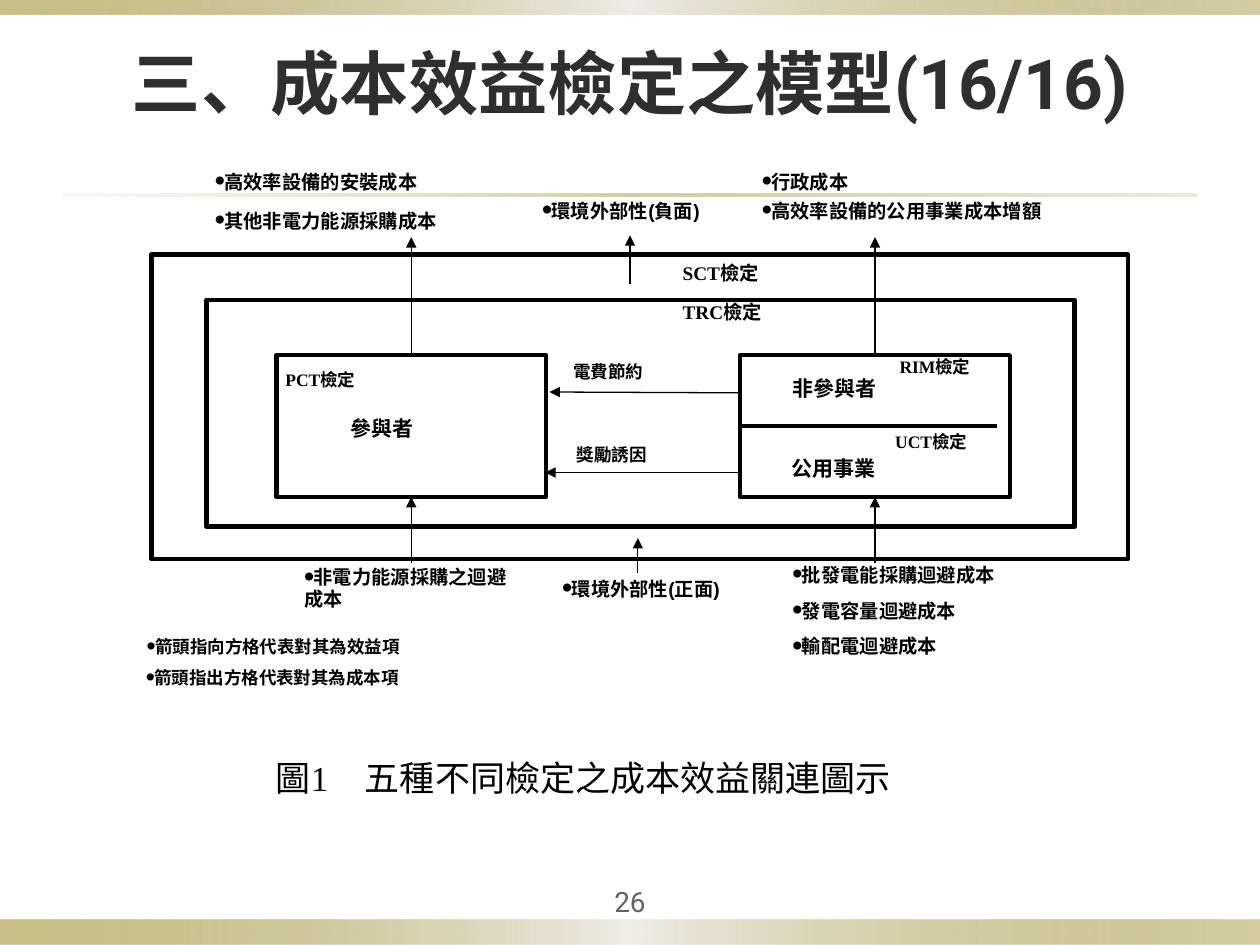
from dataclasses import dataclass
from typing import NamedTuple

from lxml import etree
from pptx import Presentation
from pptx.dml.color import RGBColor
from pptx.enum.shapes import MSO_CONNECTOR, MSO_SHAPE
from pptx.enum.text import MSO_ANCHOR, PP_ALIGN
from pptx.oxml.ns import qn
from pptx.util import Pt

STRAIGHT = MSO_CONNECTOR.STRAIGHT
RECTANGLE = MSO_SHAPE.RECTANGLE
TOP, MIDDLE = MSO_ANCHOR.TOP, MSO_ANCHOR.MIDDLE
LEFT, CENTER, JUSTIFY = PP_ALIGN.LEFT, PP_ALIGN.CENTER, PP_ALIGN.JUSTIFY
SIDE_TOP, SIDE_LEFT, SIDE_BOTTOM = 0, 1, 2


@dataclass(frozen=True)
class Theme:
    ink: str = "000000"
    title_ink: str = "2F2F2F"
    number_ink: str = "626262"
    gold: str = "918415"
    pale: str = "EEECE7"
    sand: str = "DBD8CA"
    sans: str = "Arial"
    serif: str = "Times New Roman"
    heading: str = "Roboto"
    title_size: float = 39.6
    caption_size: float = 20
    number_size: float = 16
    role_size: float = 12
    item_size: float = 11
    note_size: float = 10
    thick: float = 2.5
    thin: float = 0.75


THEME = Theme()


class Area(NamedTuple):
    left: float
    top: float
    width: float
    height: float


class Span(NamedTuple):
    text: str
    size: float
    face: str = THEME.sans
    bold: bool = True
    color: str = THEME.ink
    raised: bool = False


class Label(NamedTuple):
    text: str
    area: Area
    size: float
    face: str = THEME.sans


class Arrow(NamedTuple):
    start: tuple[float, float]
    end: tuple[float, float]


class Stop(NamedTuple):
    position: int
    color: str
    opacity: int


def apply_format(target, values: dict) -> None:
    for name, value in values.items():
        setattr(target, name, value)


def points(area: Area) -> list:
    return [Pt(value) for value in area]


def draw_text(page, area: Area, spans: list[Span], align=LEFT, anchor=TOP,
              spacing=None, tab=None):
    box = page.shapes.add_textbox(*points(area))
    apply_format(box.text_frame, {"word_wrap": True, "vertical_anchor": anchor})
    para = box.text_frame.paragraphs[0]
    apply_format(para, {"alignment": align, "line_spacing": spacing})
    if tab:
        tabs = etree.SubElement(para._p.get_or_add_pPr(), qn("a:tabLst"))
        etree.SubElement(tabs, qn("a:tab"), pos=str(Pt(tab)), algn="l")
    for span in spans:
        run = para.add_run()
        run.text = span.text
        apply_format(run.font, {"size": Pt(span.size), "name": span.face, "bold": span.bold})
        run.font.color.rgb = RGBColor.from_string(span.color)
        if span.raised:
            run._r.get_or_add_rPr().set("baseline", "30000")
    return box


def draw_label(page, label: Label) -> None:
    draw_text(page, label.area, [Span(label.text, label.size, label.face)])


def draw_item(page, label: Label) -> None:
    spans = [Span("●", label.size - 2, raised=True), Span(label.text, label.size)]
    draw_text(page, label.area, spans, spacing=0.96)


def draw_band(page, area: Area, stops: list[Stop]) -> None:
    band = page.shapes.add_shape(RECTANGLE, *points(area))
    band.shadow.inherit = False
    band.line.fill.background()
    band.fill.gradient()
    band.fill.gradient_angle = 0
    stop_list = band._element.spPr.find(qn("a:gradFill")).find(qn("a:gsLst"))
    for old in list(stop_list):
        stop_list.remove(old)
    for stop in stops:
        entry = etree.SubElement(stop_list, qn("a:gs"), pos=str(stop.position * 1000))
        color = etree.SubElement(entry, qn("a:srgbClr"), val=stop.color)
        etree.SubElement(color, qn("a:alpha"), val=str(stop.opacity * 1000))


def draw_frame(page, area: Area):
    frame = page.shapes.add_shape(RECTANGLE, *points(area))
    frame.shadow.inherit = False
    frame.fill.background()
    frame.line.color.rgb = RGBColor.from_string(THEME.ink)
    frame.line.width = Pt(THEME.thick)
    return frame


def draw_line(page, arrow: Arrow, width=THEME.thin, head=True):
    line = page.shapes.add_connector(STRAIGHT, *(Pt(v) for v in arrow.start + arrow.end))
    line.line.color.rgb = RGBColor.from_string(THEME.ink)
    line.line.width = Pt(width)
    properties = line._element.spPr
    if head:
        etree.SubElement(properties.find(qn("a:ln")), qn("a:tailEnd"), type="triangle")
    etree.SubElement(properties, qn("a:effectLst"))
    return line


TEST_LABELS = [
    Label("SCT檢定", Area(383, 145.5, 91, 32), THEME.item_size, THEME.serif),
    Label("TRC檢定", Area(383, 168, 91, 32), THEME.item_size, THEME.serif),
    Label("PCT檢定", Area(156, 207.5, 85, 32), THEME.note_size, THEME.serif),
    Label("RIM檢定", Area(507, 200, 94, 32), THEME.note_size, THEME.serif),
    Label("UCT檢定", Area(504.5, 242.5, 94, 32), THEME.note_size, THEME.serif),
]
ROLE_LABELS = [
    Label("參與者", Area(193, 234, 78, 32), THEME.role_size),
    Label("非參與者", Area(446, 211, 96, 32), THEME.role_size),
    Label("公用事業", Area(445, 256.5, 96, 32), THEME.role_size),
]
FLOW_LABELS = [
    Label("電費節約", Area(320.5, 202.5, 94, 32), THEME.note_size),
    Label("獎勵誘因", Area(322.5, 250, 94, 32), THEME.note_size),
]
ITEMS = [
    Label("高效率設備的安裝成本", Area(116, 94.5, 184, 37), THEME.item_size),
    Label("其他非電力能源採購成本", Area(116, 117, 204, 47), THEME.item_size),
    Label("環境外部性(負面)", Area(303, 111, 106.5, 32), THEME.item_size),
    Label("行政成本", Area(428.5, 94.5, 113, 22), THEME.item_size),
    Label("高效率設備的公用事業成本增額", Area(428.5, 111, 204.5, 28), THEME.item_size),
    Label("非電力能源採購之迴避成本", Area(167, 320.5, 134.5, 47), THEME.item_size),
    Label("環境外部性(正面)", Area(314.5, 327, 108, 47), THEME.item_size),
    Label("批發電能採購迴避成本", Area(446, 319, 189, 30), THEME.item_size),
    Label("發電容量迴避成本", Area(446, 339.5, 154, 30), THEME.item_size),
    Label("輸配電迴避成本", Area(446, 360, 142, 32), THEME.item_size),
    Label("箭頭指向方格代表對其為效益項", Area(77, 360.5, 256, 27), THEME.note_size),
    Label("箭頭指出方格代表對其為成本項", Area(76.5, 378.5, 256, 27), THEME.note_size),
]
FREE_ARROWS = [
    Arrow((423, 224.5), (314, 224)),
    Arrow((423, 270), (311.5, 270)),
    Arrow((360, 162), (360, 134.5)),
    Arrow((364.5, 327.5), (364.5, 307.5)),
]


def draw_diagram(page) -> None:
    for area in (Area(86.5, 145.5, 558, 174), Area(118, 171.5, 496, 129.5)):
        draw_frame(page, area)
    participant, utility = (draw_frame(page, Area(left, 203, 154, 81)) for left in (158, 423))
    for frame, center in ((participant, 235), (utility, 500)):
        cost = draw_line(page, Arrow((center, 203), (center, 135.5)))
        cost.begin_connect(frame, SIDE_TOP)
        benefit = draw_line(page, Arrow((center, 322), (center, 284)))
        benefit.end_connect(frame, SIDE_BOTTOM)
    divider = draw_line(page, Arrow((423, 243.5), (570, 243.5)), THEME.thick, head=False)
    divider.begin_connect(utility, SIDE_LEFT)
    for arrow in FREE_ARROWS:
        draw_line(page, arrow)
    for label in TEST_LABELS + ROLE_LABELS + FLOW_LABELS:
        draw_label(page, label)
    for item in ITEMS:
        draw_item(page, item)


def main() -> None:
    deck = Presentation()
    apply_format(deck, {"slide_width": Pt(720), "slide_height": Pt(540)})
    page = deck.slides.add_slide(deck.slide_layouts[6])
    edge = [Stop(0, THEME.gold, 50), Stop(50, THEME.pale, 100), Stop(100, THEME.gold, 40)]
    rule = [Stop(0, THEME.sand, 20), Stop(50, THEME.gold, 40), Stop(100, THEME.sand, 50)]
    draw_band(page, Area(0, 525.5, 720, 14.5), edge)
    draw_band(page, Area(0, 0, 720, 8.5), edge)
    draw_band(page, Area(36, 110.8, 648, 1.5), rule)
    draw_text(page, Area(36, 21.5, 648, 50),
              [Span("三、成本效益檢定之模型(16/16)", THEME.title_size, THEME.heading,
                    color=THEME.title_ink)], CENTER, MIDDLE)
    draw_text(page, Area(150.5, 428.5, 374, 34),
              [Span("圖", THEME.caption_size, bold=False),
               Span("1", THEME.caption_size, THEME.serif, False),
               Span("\t五種不同檢定之成本效益關連圖示", THEME.caption_size, bold=False)],
              JUSTIFY, tab=51)
    draw_text(page, Area(324, 504, 72, 22.5),
              [Span("26", THEME.number_size, THEME.heading, False, THEME.number_ink)],
              CENTER, MIDDLE)
    draw_diagram(page)
    deck.save("out.pptx")


if __name__ == "__main__":
    main()
